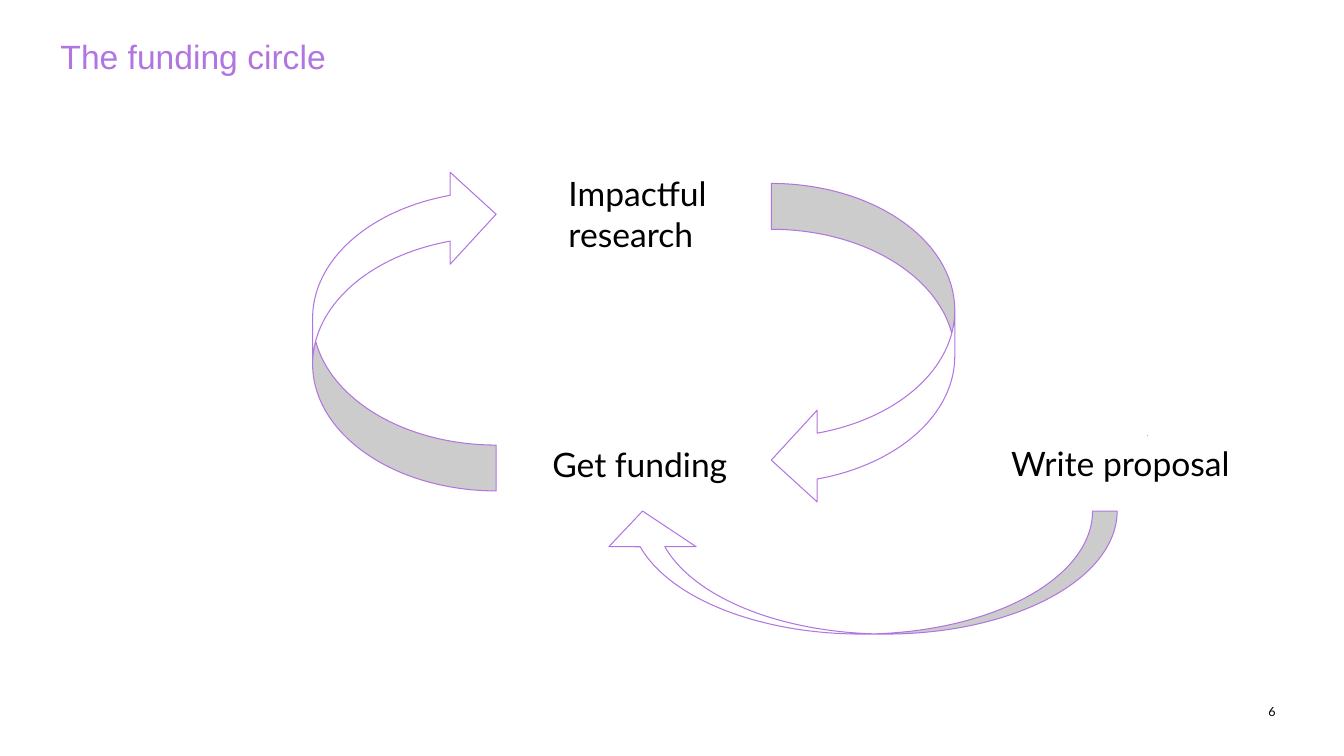
from pptx import Presentation
from pptx.dml.color import RGBColor
from pptx.enum.shapes import MSO_SHAPE as SHAPE
from pptx.enum.text import MSO_ANCHOR as ANCHOR
from pptx.util import Inches, Pt

PURPLE, WHITE, BLACK = "B175E1", "FFFFFF", "000000"


def color(hex_string):
    return RGBColor.from_string(hex_string)


def add_text(box, text, size, font, text_color, inset=0):
    frame = slide.shapes.add_textbox(*map(Inches, box)).text_frame
    frame.word_wrap = True
    frame.margin_left = frame.margin_right = Inches(inset)
    frame.margin_top = frame.margin_bottom = Inches(inset / 2)
    frame.text = text
    for paragraph in frame.paragraphs:
        paragraph.font.size = Pt(size)
        paragraph.font.name = font
        paragraph.font.color.rgb = color(text_color)
    return frame


prs = Presentation()
prs.slide_width, prs.slide_height = Inches(13.33), Inches(7.5)
slide = prs.slides.add_slide(prs.slide_layouts[6])

title = add_text((0.6, 0.4, 11.69, 0.28), "The funding circle", 24, "Arial", PURPLE)
title.paragraphs[0].line_spacing = 0.9
page_number = add_text((12.58, 6.94, 0.24, 0.24), "6", 9, "Lato", BLACK)
page_number.vertical_anchor = ANCHOR.MIDDLE

# Arrows and the dot: preset, box, rotation, mirrored, adjustments
outlines = [
    (SHAPE.CURVED_RIGHT_ARROW, (3.1, 1.67, 1.82, 3.2), 180, True, ()),
    (SHAPE.CURVED_RIGHT_ARROW, (7.65, 1.82, 1.82, 3.2), 0, True, ()),
    (SHAPE.CURVED_LEFT_ARROW, (7.9, 3.11, 1.22, 5.14), 90, False, (0.2, 0.71, 0.29)),
    (SHAPE.RECTANGLE, (11.38, 4.32, 0, 0), 0, False, ()),
]
for preset, box, rotation, mirrored, adjustments in outlines:
    outline = slide.shapes.add_shape(preset, *map(Inches, box))
    outline.shadow.inherit = False
    outline.rotation = rotation
    if mirrored:
        outline._element.spPr.xfrm.set("flipH", "1")
    for index, value in enumerate(adjustments):
        outline.adjustments[index] = value
    outline.fill.solid()
    outline.fill.fore_color.rgb = color(WHITE)
    outline.line.color.rgb = color(PURPLE)
    outline.line.width = Pt(0.75)

stages = [
    ("Get funding", (5.38, 4.35, 2.1, 0.67)),
    ("Impactful\nresearch", (5.54, 1.67, 1.8, 0.67)),
    ("Write proposal", (9.93, 4.34, 2.5, 0.67)),
]
for stage, box in stages:
    add_text(box, stage, 24, "Lato", BLACK, inset=0.1)

prs.save("out.pptx")
